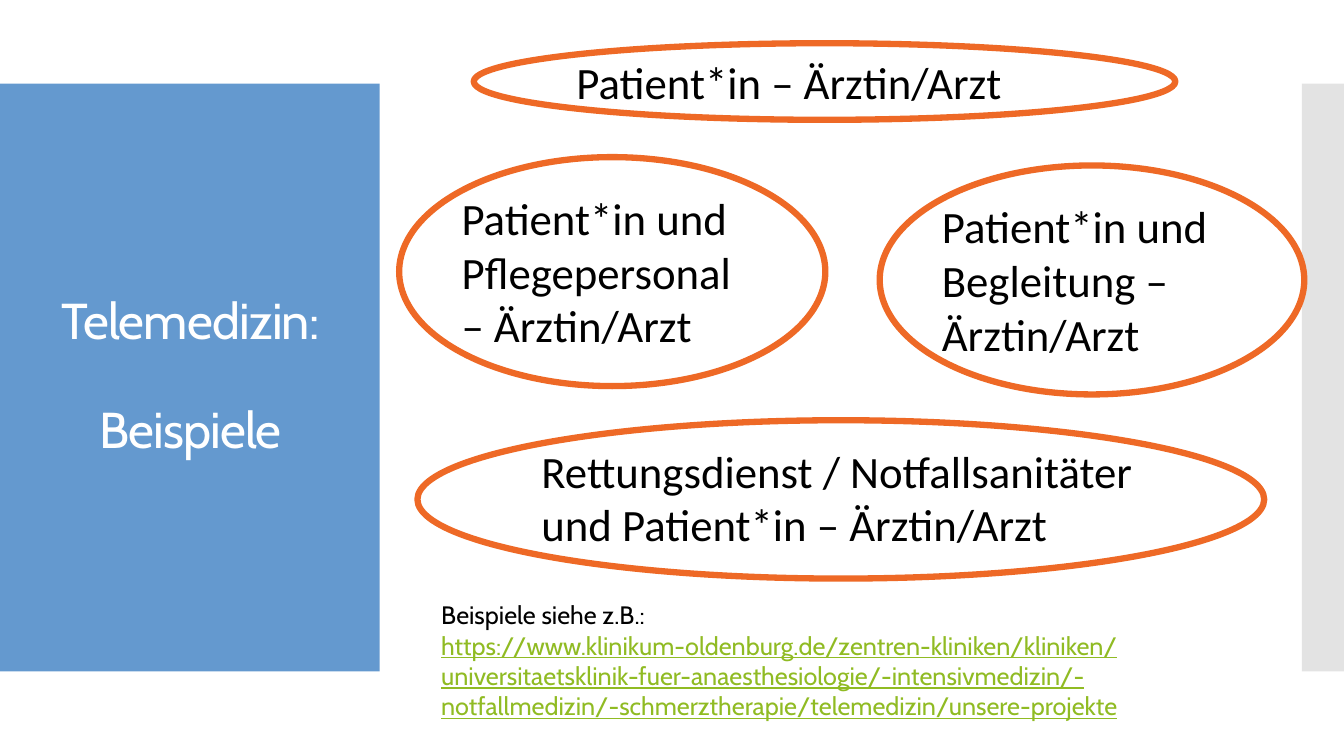
from dataclasses import dataclass

from lxml import etree
from pptx import Presentation
from pptx.dml.color import RGBColor
from pptx.enum import shapes, text
from pptx.oxml import ns
from pptx.util import Cm, Pt

HUES = {
    "blue": "6499CF",
    "gray": "C8C8C8",
    "orange": "EE6926",
    "green": "90BB23",
    "black": "000000",
    "white": "FFFFFF",
}
LINK = (
    "https://www.klinikum-oldenburg.de/zentren-kliniken/kliniken/"
    "universitaetsklinik-fuer-anaesthesiologie/-intensivmedizin/"
    "-notfallmedizin/-schmerztherapie/telemedizin/unsere-projekte"
)


@dataclass
class Box:
    """Position and size in centimetres."""
    left: float
    top: float
    width: float
    height: float

    def place(self) -> tuple:
        return Cm(self.left), Cm(self.top), Cm(self.width), Cm(self.height)


@dataclass
class Panel:
    box: Box
    hue: str
    alpha: int = 100


@dataclass
class Oval:
    box: Box
    label: str


PANELS = [
    Panel(Box(0, 2.11, 9.57, 14.81), "blue"),
    Panel(Box(32.81, 2.11, 1.06, 14.81), "gray", 50),
]
OVALS = [
    Oval(Box(11.94, 1.09, 17.68, 1.93), "Patient*in – Ärztin/Arzt"),
    Oval(Box(22.17, 4.17, 10.7, 5.77), "Patient*in und Begleitung – Ärztin/Arzt"),
    Oval(Box(10.06, 3.96, 10.74, 5.77), "Patient*in und Pflegepersonal – Ärztin/Arzt"),
    Oval(Box(10.52, 10.59, 21.34, 3.99),
         "Rettungsdienst / Notfallsanitäter und Patient*in – Ärztin/Arzt"),
]


def color(hue: str) -> RGBColor:
    return RGBColor.from_string(HUES[hue])


def style(font, name: str, size: int, hue: str) -> None:
    font.name, font.size = name, Pt(size)
    font.color.rgb = color(hue)


def add_panel(slide, panel: Panel) -> None:
    rect = slide.shapes.add_shape(shapes.MSO_SHAPE.RECTANGLE, *panel.box.place())
    rect.shadow.inherit = False
    rect.fill.solid()
    rect.fill.fore_color.rgb = color(panel.hue)
    rect.line.fill.background()
    if panel.alpha < 100:
        tint = rect.fill._xPr.find(".//" + ns.qn("a:srgbClr"))
        etree.SubElement(tint, ns.qn("a:alpha"), val=str(panel.alpha * 1000))


def add_oval(slide, oval: Oval) -> None:
    ring = slide.shapes.add_shape(shapes.MSO_SHAPE.OVAL, *oval.box.place())
    ring.shadow.inherit = False
    ring.fill.background()
    ring.line.color.rgb = color("orange")
    ring.line.width = Pt(4.5)
    frame = ring.text_frame
    frame.word_wrap = True
    frame.vertical_anchor = text.MSO_ANCHOR.TOP
    frame.margin_left = frame.margin_right = 0
    frame.margin_top = frame.margin_bottom = 0
    para = frame.paragraphs[0]
    para.text = oval.label
    para.alignment = text.PP_ALIGN.LEFT
    style(para.font, "Calibri", 32, "black")


def add_frame(slide, box: Box):
    frame = slide.shapes.add_textbox(*box.place()).text_frame
    frame.word_wrap = True
    return frame


def add_title(slide) -> None:
    frame = add_frame(slide, Box(0.71, 3.12, 8.18, 12.78))
    frame.vertical_anchor = text.MSO_ANCHOR.MIDDLE
    para = frame.paragraphs[0]
    para.text = "Telemedizin:\v\vBeispiele"
    para.alignment = text.PP_ALIGN.CENTER
    para.line_spacing = 0.9
    style(para.font, "Cabin", 36, "white")
    for run in para.runs:
        run.font._element.set("spc", "-60")
    for gap in para._p.findall(ns.qn("a:br")):
        etree.SubElement(gap, ns.qn("a:rPr"), sz="3600")


def add_source(slide) -> None:
    para = add_frame(slide, Box(10.87, 14.99, 17.78, 3.33)).paragraphs[0]
    para.text = "Beispiele siehe z.B.:\v"
    style(para.font, "Cabin", 18, "black")
    run = para.add_run()
    run.text = LINK
    run.font.color.rgb = color("green")
    run.font.underline = True


def main() -> None:
    deck = Presentation()
    deck.slide_width, deck.slide_height = Cm(33.87), Cm(19.05)
    slide = deck.slides.add_slide(deck.slide_layouts[6])
    for panel in PANELS:
        add_panel(slide, panel)
    add_title(slide)
    for oval in OVALS:
        add_oval(slide, oval)
    add_source(slide)
    deck.save("out.pptx")


if __name__ == "__main__":
    main()
